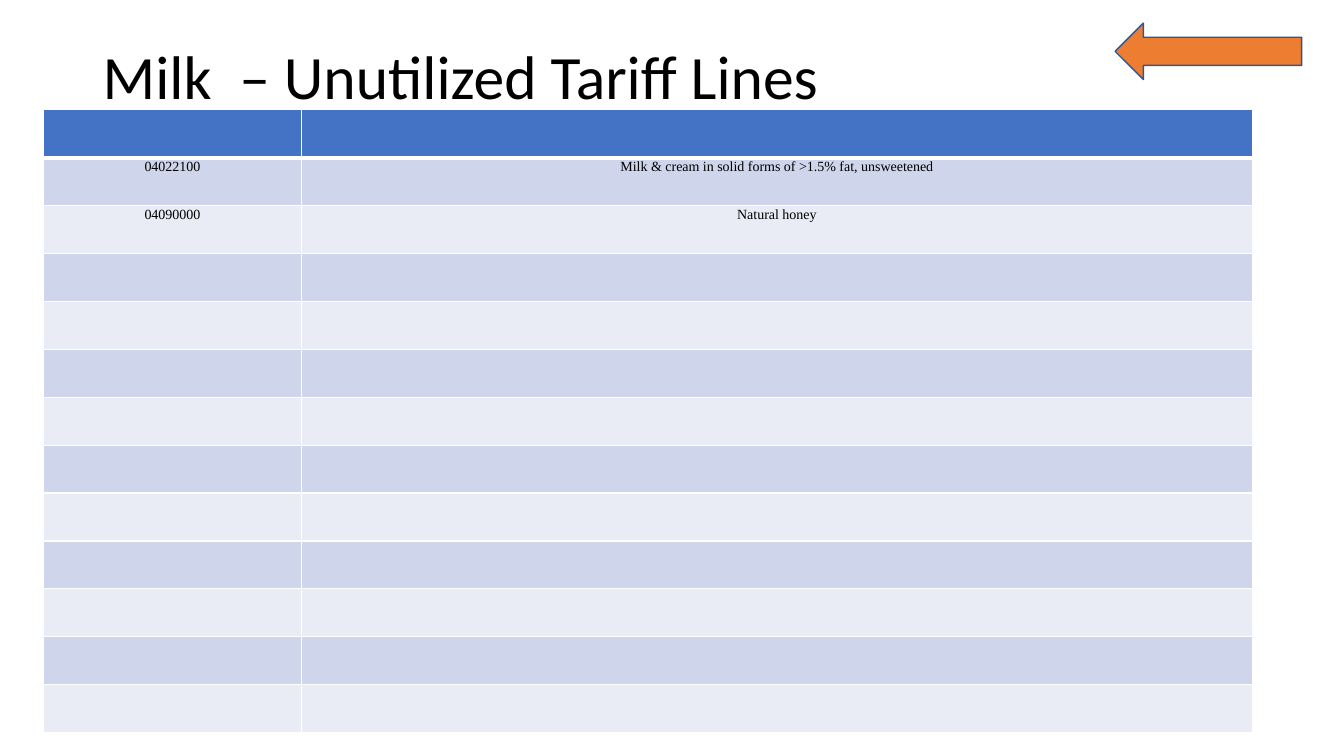
import pptx
import pptx.util
import pptx.dml.color
import pptx.enum.shapes
import pptx.enum.text
import pptx.oxml
import pptx.oxml.ns

Inches = pptx.util.Inches
Pt = pptx.util.Pt

COLORS = {
    "text": "000000",
    "header": "4472C4",
    "odd_row": "CFD5EA",
    "even_row": "E9EBF5",
    "border": "FFFFFF",
    "arrow": "ED7D31",
    "arrow_line": "325491",
}
TITLE_FONT = {"name": "Calibri", "size": Pt(44)}
CELL_FONT = {"name": "Times New Roman", "size": Pt(10)}
CELL_MARGINS = {
    "margin_left": Inches(0.01),
    "margin_top": Inches(0.01),
    "margin_right": Inches(0.01),
    "margin_bottom": 0,
}
TARIFF_LINES = [
    ("04022100", "Milk & cream in solid forms of >1.5% fat, unsweetened"),
    ("04090000", "Natural honey"),
]
ROW_COUNT = 13
COLUMN_WIDTHS = (2.56, 9.43)


def rgb(name):
    return pptx.dml.color.RGBColor.from_string(COLORS[name])


def set_attributes(obj, values):
    for name, value in values.items():
        setattr(obj, name, value)


def fill_solid(obj, color):
    obj.fill.solid()
    obj.fill.fore_color.rgb = rgb(color)


def add_run(p, text, font):
    r = p.add_run()
    r.text = text
    set_attributes(r.font, font)
    r.font.color.rgb = rgb("text")


def add_title(s, text, left, top, width, height):
    sp = s.shapes.add_textbox(Inches(left), Inches(top), Inches(width), Inches(height))
    tf = sp.text_frame
    tf.word_wrap = True
    tf.vertical_anchor = pptx.enum.text.MSO_ANCHOR.MIDDLE
    p = tf.paragraphs[0]
    p.line_spacing = 0.9
    add_run(p, text, TITLE_FONT)


def set_borders(cell, widths):
    tc_pr = cell._tc.get_or_add_tcPr()
    for side, width in widths.items():
        tc_pr.append(pptx.oxml.parse_xml(
            f'<a:ln{side} {pptx.oxml.ns.nsdecls("a")} w="{Pt(width)}">'
            f'<a:solidFill><a:srgbClr val="{COLORS["border"]}"/></a:solidFill>'
            f'</a:ln{side}>'))


def add_tariff_table(s, left, top, height):
    frame = s.shapes.add_table(
        ROW_COUNT, len(COLUMN_WIDTHS), Inches(left), Inches(top),
        Inches(sum(COLUMN_WIDTHS)), Inches(height))
    table = frame.table
    for column, width in zip(table.columns, COLUMN_WIDTHS):
        column.width = Inches(width)

    # Header and alternating row bands
    for i, row in enumerate(table.rows):
        row.height = Inches(height / ROW_COUNT)
        band = "header" if i == 0 else "odd_row" if i % 2 else "even_row"
        for cell in row.cells:
            set_borders(cell, {"L": 1, "R": 1, "T": 1, "B": 1 if i else 3})
            fill_solid(cell, band)

    # Tariff codes and descriptions
    for i, line in enumerate(TARIFF_LINES, start=1):
        for j, text in enumerate(line):
            cell = table.cell(i, j)
            set_attributes(cell, CELL_MARGINS)
            p = cell.text_frame.paragraphs[0]
            p.alignment = pptx.enum.text.PP_ALIGN.CENTER
            add_run(p, text, CELL_FONT)


def add_back_arrow(s, left, top, width, height):
    sp = s.shapes.add_shape(
        pptx.enum.shapes.MSO_SHAPE.LEFT_ARROW,
        Inches(left), Inches(top), Inches(width), Inches(height))
    sp.shadow.inherit = False
    fill_solid(sp, "arrow")
    sp.line.color.rgb = rgb("arrow_line")
    sp.line.width = Pt(1)


def main():
    prs = pptx.Presentation()
    prs.slide_width = Inches(13.33)
    prs.slide_height = Inches(7.5)
    s = prs.slides.add_slide(prs.slide_layouts[6])

    add_title(s, "Milk  – Unutilized Tariff Lines", 0.92, 0.4, 11.5, 0.78)
    add_tariff_table(s, 0.43, 1.09, 6.18)
    add_back_arrow(s, 11.06, 0.23, 1.85, 0.56)

    prs.save("out.pptx")


if __name__ == "__main__":
    main()
